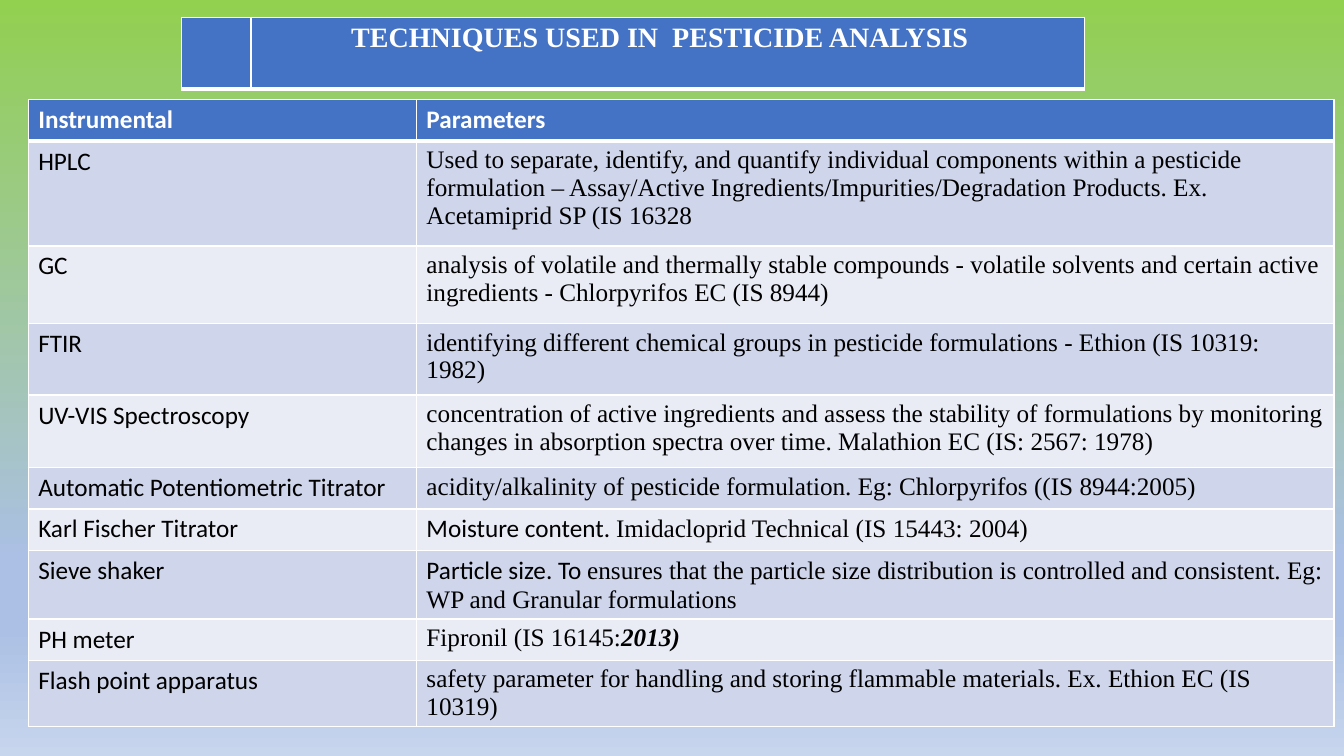
from dataclasses import dataclass

from lxml.etree import SubElement
from pptx import Presentation
from pptx.dml.color import RGBColor
from pptx.enum.text import PP_ALIGN
from pptx.oxml.ns import qn
from pptx.util import Inches, Pt


@dataclass(frozen=True)
class Theme:
    header: str = "4472C4"
    bands: tuple = ("CFD5EA", "E9EBF5")
    light: str = "FFFFFF"
    dark: str = "000000"
    background: tuple = ((0, "92D050"), (74, "ABC0E4"), (83, "ABC0E4"), (100, "C7D5ED"))
    sans: str = "Calibri"
    serif: str = "Times New Roman"
    title_size: int = 20
    body_size: int = 18
    thin: int = 1
    thick: int = 3


THEME = Theme()
HEADINGS = ("Instrumental", "Parameters")

# Row height, instrument, sans lead-in, serif description, bold italic ending
TECHNIQUES = [
    (1.04, "HPLC", "", "Used to separate, identify, and quantify individual components "
     "within a pesticide formulation – Assay/Active Ingredients/Impurities/Degradation "
     "Products. Ex. Acetamiprid SP (IS 16328", ""),
    (0.77, "GC", "", "analysis of volatile and thermally stable compounds - volatile "
     "solvents and certain active ingredients - Chlorpyrifos EC (IS 8944)", ""),
    (0.71, "FTIR", "", "identifying different chemical groups in pesticide formulations "
     "- Ethion (IS 10319: 1982)", ""),
    (0.72, "UV-VIS Spectroscopy", "", "concentration of active ingredients and assess the "
     "stability of formulations by monitoring changes in absorption spectra over time. "
     "Malathion EC (IS: 2567: 1978)", ""),
    (0.41, "Automatic Potentiometric Titrator", "",
     "acidity/alkalinity of pesticide formulation. Eg: Chlorpyrifos ((IS 8944:2005)", ""),
    (0.41, "Karl Fischer Titrator", "Moisture content. ",
     "Imidacloprid Technical (IS 15443: 2004)", ""),
    (0.68, "Sieve shaker", "Particle size. To ", "ensures that the particle size "
     "distribution is controlled and consistent. Eg: WP and Granular formulations", ""),
    (0.41, "PH meter", "", "Fipronil (IS 16145:", "2013)"),
    (0.66, "Flash point apparatus", "", "safety parameter for handling and storing "
     "flammable materials. Ex. Ethion EC (IS 10319)", ""),
]


def paint_background(slide):
    fill = slide.background.fill
    fill.gradient()
    fill.gradient_angle = 270
    stops = slide.element.find(".//" + qn("a:gsLst"))
    for stop in list(stops):
        stops.remove(stop)
    for percent, color in THEME.background:
        stop = SubElement(stops, qn("a:gs"), pos=str(percent * 1000))
        SubElement(stop, qn("a:srgbClr"), val=color)


def style_cell(cell, color, top, bottom):
    """Draw white borders, then fill the cell."""
    properties = cell._tc.get_or_add_tcPr()
    widths = {"a:lnL": THEME.thin, "a:lnR": THEME.thin, "a:lnT": top, "a:lnB": bottom}
    for side, width in widths.items():
        border = SubElement(properties, qn(side), w=str(Pt(width)))
        SubElement(SubElement(border, qn("a:solidFill")), qn("a:srgbClr"), val=THEME.light)
    cell.fill.solid()
    cell.fill.fore_color.rgb = RGBColor.from_string(color)


def write(cell, text, font, color=THEME.dark, size=THEME.body_size, bold=False, italic=False):
    """Add one formatted run to the cell."""
    run = cell.text_frame.paragraphs[0].add_run()
    run.text = text
    run.font.name = font
    run.font.size = Pt(size)
    run.font.bold = bold
    run.font.italic = italic
    run.font.color.rgb = RGBColor.from_string(color)


def add_grid(slide, left, top, widths, heights):
    """Add a table whose first row is a header and whose other rows are banded."""
    table = slide.shapes.add_table(
        len(heights), len(widths), Inches(left), Inches(top),
        Inches(sum(widths)), Inches(sum(heights))).table
    for column, width in zip(table.columns, widths):
        column.width = Inches(width)
    for index, (row, height) in enumerate(zip(table.rows, heights)):
        row.height = Inches(height)
        color = THEME.bands[(index - 1) % 2] if index else THEME.header
        for cell in row.cells:
            style_cell(cell, color, THEME.thick if index == 1 else THEME.thin,
                       THEME.thin if index else THEME.thick)
    return table


def add_techniques(slide):
    heights = [0.41] + [technique[0] for technique in TECHNIQUES]
    table = add_grid(slide, 0.28, 0.99, (3.85, 9.1), heights)
    for column, heading in enumerate(HEADINGS):
        write(table.cell(0, column), heading, THEME.sans, THEME.light, bold=True)
    for row, (_, instrument, lead, description, ending) in enumerate(TECHNIQUES, 1):
        write(table.cell(row, 0), instrument, THEME.sans)
        parameters = table.cell(row, 1)
        if lead:
            write(parameters, lead, THEME.sans)
        write(parameters, description, THEME.serif)
        if ending:
            write(parameters, ending, THEME.serif, bold=True, italic=True)


def add_title_banner(slide):
    banner = add_grid(slide, 1.8, 0.17, (0.69, 8.27), (0.71,))
    title = banner.cell(0, 1)
    title.margin_right = Inches(0.26)
    write(title, "TECHNIQUES USED IN  PESTICIDE ANALYSIS", THEME.serif, THEME.light,
          THEME.title_size, bold=True)
    title.text_frame.paragraphs[0].alignment = PP_ALIGN.CENTER


def main():
    presentation = Presentation()
    presentation.slide_width = Inches(13.33)
    presentation.slide_height = Inches(7.5)
    slide = presentation.slides.add_slide(presentation.slide_layouts[6])
    paint_background(slide)
    add_techniques(slide)
    add_title_banner(slide)
    presentation.save("out.pptx")


if __name__ == "__main__":
    main()
